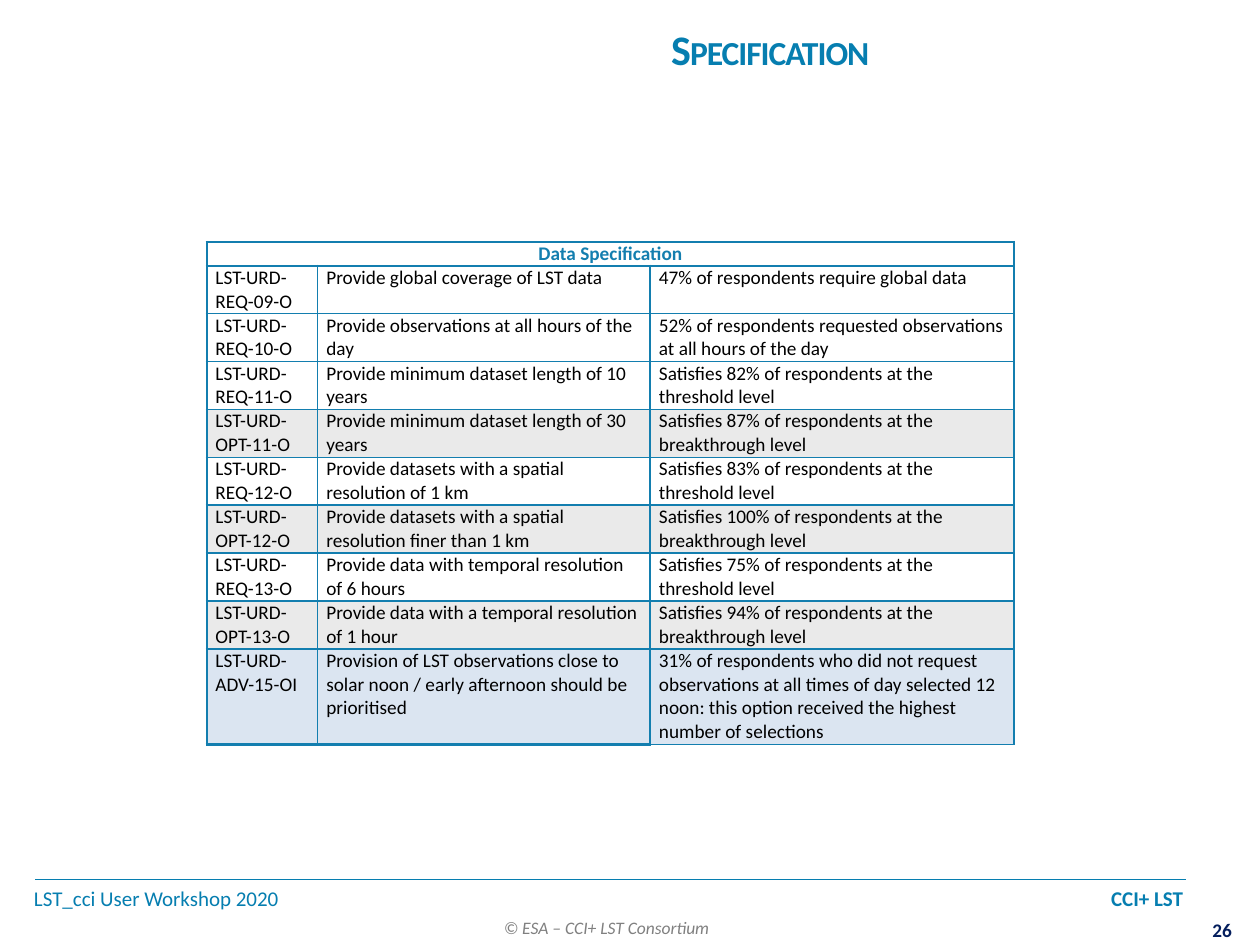
from lxml import etree
from pptx import Presentation
from pptx import util as u
from pptx.dml.color import RGBColor
from pptx.enum import shapes, text
from pptx.oxml.ns import qn

FONT = "Calibri"
BLUE, TABLE_BLUE = "067EB0", "137EAF"
FILLS = {"REQ": None, "OPT": "EAEAEA", "ADV": "DBE5F1"}
HEADING = "Data Specification"
REQUIREMENTS = [
    ("LST-URD-REQ-09-O", "Provide global coverage of LST data",
     "47% of respondents require global data"),
    ("LST-URD-REQ-10-O", "Provide observations at all hours of the day",
     "52% of respondents requested observations at all hours of the day"),
    ("LST-URD-REQ-11-O", "Provide minimum dataset length of 10 years",
     "Satisfies 82% of respondents at the threshold level"),
    ("LST-URD-OPT-11-O", "Provide minimum dataset length of 30 years",
     "Satisfies 87% of respondents at the breakthrough level"),
    ("LST-URD-REQ-12-O", "Provide datasets with a spatial resolution of 1 km",
     "Satisfies 83% of respondents at the threshold level"),
    ("LST-URD-OPT-12-O", "Provide datasets with a spatial resolution finer than 1 km",
     "Satisfies 100% of respondents at the breakthrough level"),
    ("LST-URD-REQ-13-O", "Provide data with temporal resolution of 6 hours",
     "Satisfies 75% of respondents at the threshold level"),
    ("LST-URD-OPT-13-O", "Provide data with a temporal resolution of 1 hour",
     "Satisfies 94% of respondents at the breakthrough level"),
    ("LST-URD-ADV-15-OI",
     "Provision of LST observations close to solar noon / early afternoon should be prioritised",
     "31% of respondents who did not request observations at all times of day selected 12 noon: "
     "this option received the highest number of selections"),
]
COLUMN_WIDTHS = [0.88, 2.64, 2.89]
ROW_HEIGHTS = [0.19] + [0.38] * 8 + [0.76]


def color(hex_string):
    return RGBColor.from_string(hex_string)


def add_run(paragraph, words, size, hex_color, bold=False, italic=False):
    run = paragraph.add_run()
    run.text = words
    font = run.font
    font.name, font.size = FONT, u.Pt(size)
    font.bold, font.italic = bold, italic
    font.color.rgb = color(hex_color)
    return run


def add_text_box(slide, place, insets, wrap=False):
    frame = slide.shapes.add_textbox(*map(u.Inches, place)).text_frame
    frame.word_wrap = wrap
    frame.margin_left = frame.margin_right = u.Inches(insets[0])
    frame.margin_top = frame.margin_bottom = u.Inches(insets[1])
    return frame.paragraphs[0]


def add_title(slide):
    title = slide.shapes.title
    title.left, title.top, title.width, title.height = map(u.Inches, (3.5, 0.05, 5.12, 0.67))
    title.text_frame.vertical_anchor = text.MSO_ANCHOR.MIDDLE
    paragraph = title.text_frame.paragraphs[0]
    paragraph.alignment = text.PP_ALIGN.CENTER
    properties = add_run(paragraph, "Specification", 24, BLUE, bold=True).font._element
    properties.set("cap", "small")
    properties.set("spc", "-60")


def add_footer(slide):
    paragraph = add_text_box(slide, (0.27, 6.98, 9.14, 0.3), (0, 0.05), wrap=True)
    tabs = etree.SubElement(paragraph._p.get_or_add_pPr(), qn("a:tabLst"))
    etree.SubElement(tabs, qn("a:tab"), pos=str(u.Inches(9.12)), algn="r")
    add_run(paragraph, "LST_cci User Workshop 2020\t", 12, BLUE)
    add_run(paragraph, "CCI+ LST", 12, BLUE, bold=True)

    rule = slide.shapes.add_connector(
        shapes.MSO_CONNECTOR.STRAIGHT, *map(u.Inches, (0.28, 6.98, 9.41, 6.98)))
    rule.line.color.rgb = color(BLUE)
    rule.line.width = u.Pt(1)
    etree.SubElement(rule._element.spPr, qn("a:effectLst"))

    paragraph = add_text_box(slide, (3.9, 7.23, 1.86, 0.27), (0.1, 0.05))
    add_run(paragraph, "© ESA – CCI+ LST Consortium", 10, "808080", italic=True)

    paragraph = add_text_box(slide, (9.57, 7.29, 0.26, 0.19), (0, 0))
    paragraph.alignment = text.PP_ALIGN.CENTER
    add_run(paragraph, "26", 11, "041E5D", bold=True)


def set_borders(cell, row, column):
    thick = {
        "L": column == 0 or row == 0,
        "R": column == 2 or row == 0,
        "T": row in (0, 1, 9),
        "B": row in (0, 8) or (row == 9 and column < 2),
    }
    properties = cell._tc.get_or_add_tcPr()
    for side, is_thick in thick.items():
        width = u.Pt(1.5 if is_thick else 1)
        line = etree.SubElement(properties, qn(f"a:ln{side}"), w=str(width))
        fill = etree.SubElement(line, qn("a:solidFill"))
        etree.SubElement(fill, qn("a:srgbClr"), val=TABLE_BLUE)


def format_cell(cell, row, column, fill):
    set_borders(cell, row, column)
    cell.margin_left = cell.margin_right = u.Inches(0.07)
    cell.margin_top = cell.margin_bottom = 0
    if fill:
        cell.fill.solid()
        cell.fill.fore_color.rgb = color(fill)
    else:
        cell.fill.background()


def add_requirements_table(slide):
    place = (1.64, 1.92, sum(COLUMN_WIDTHS), sum(ROW_HEIGHTS))
    table = slide.shapes.add_table(
        len(ROW_HEIGHTS), len(COLUMN_WIDTHS), *map(u.Inches, place)).table
    table.first_row = table.horz_banding = False
    for column, width in zip(table.columns, COLUMN_WIDTHS):
        column.width = u.Inches(width)
    for row, height in zip(table.rows, ROW_HEIGHTS):
        row.height = u.Inches(height)

    for column in range(len(COLUMN_WIDTHS)):
        format_cell(table.cell(0, column), 0, column, None)
    heading = table.cell(0, 0)
    heading.merge(table.cell(0, len(COLUMN_WIDTHS) - 1))
    paragraph = heading.text_frame.paragraphs[0]
    paragraph.alignment = text.PP_ALIGN.CENTER
    add_run(paragraph, HEADING, 11, TABLE_BLUE, bold=True)

    for row, requirement in enumerate(REQUIREMENTS, start=1):
        fill = FILLS[requirement[0].split("-")[2]]
        for column, words in enumerate(requirement):
            cell = table.cell(row, column)
            format_cell(cell, row, column, fill)
            add_run(cell.text_frame.paragraphs[0], words, 11, "000000")


def main():
    """Build the data specification slide."""
    presentation = Presentation()
    presentation.slide_width, presentation.slide_height = u.Inches(10), u.Inches(7.5)
    slide = presentation.slides.add_slide(presentation.slide_layouts[5])
    add_footer(slide)
    add_title(slide)
    add_requirements_table(slide)
    presentation.save("out.pptx")


if __name__ == "__main__":
    main()
